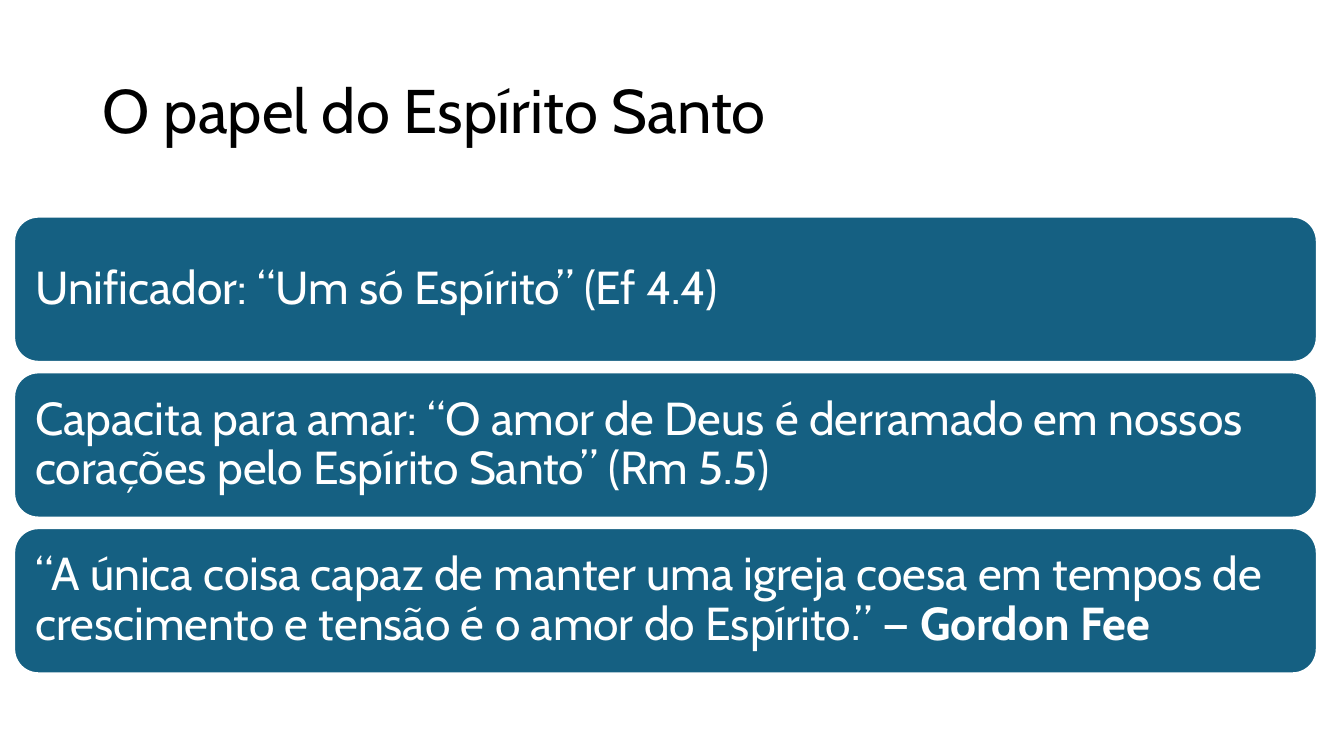
from pptx import Presentation
from pptx.dml.color import RGBColor
from pptx.enum.shapes import MSO_SHAPE as SHAPE
from pptx.enum.text import MSO_ANCHOR as ANCHOR, PP_ALIGN as ALIGN
from pptx.util import Inches, Pt

FONT = "Cabin"
WHITE, BLACK, BLUE = "FFFFFF", "000000", "156082"
CARD_LEFT, CARD_TOP, CARD_W, CARD_H = 0.14, 2.15, 12.92, 1.44
CARD_STEP = 1.545

CARDS = [
    [("Unificador: “Um só Espírito” (Ef 4.4)", False)],
    [("Capacita para amar: “O amor de Deus é derramado em nossos "
      "corações pelo Espírito Santo” (Rm 5.5)", False)],
    [("“A única coisa capaz de manter uma igreja coesa em tempos de "
      "crescimento e tensão é o amor do Espírito.” — ", False),
     ("Gordon Fee", True)],
]


def color(value):
    return RGBColor.from_string(value)


def write(tf, runs, size, ink, inset_x, inset_y):
    tf.word_wrap = True
    tf.vertical_anchor = ANCHOR.MIDDLE
    tf.margin_left = tf.margin_right = Inches(inset_x)
    tf.margin_top = tf.margin_bottom = Inches(inset_y)
    p = tf.paragraphs[0]
    p.alignment = ALIGN.LEFT
    p.line_spacing = 0.9
    for text, bold in runs:
        r = p.add_run()
        r.text = text
        r.font.name = FONT
        r.font.size = Pt(size)
        r.font.bold = bold
        r.font.color.rgb = color(ink)


def add_title(s, text):
    box = s.shapes.add_textbox(Inches(0.92), Inches(0.4), Inches(11.5), Inches(1.45))
    write(box.text_frame, [(text, False)], 44, BLACK, 0.1, 0.05)


def add_card(s, row, runs):
    top = CARD_TOP + row * CARD_STEP
    sp = s.shapes.add_shape(SHAPE.ROUNDED_RECTANGLE, Inches(CARD_LEFT), Inches(top),
                            Inches(CARD_W), Inches(CARD_H))
    sp.shadow.inherit = False
    sp.fill.solid()
    sp.fill.fore_color.rgb = color(BLUE)
    sp.line.color.rgb = color(WHITE)
    sp.line.width = Pt(1.5)
    write(sp.text_frame, runs, 33, WHITE, 0.14, 0.14)


def main():
    prs = Presentation()
    prs.slide_width, prs.slide_height = Inches(13.33), Inches(7.5)
    s = prs.slides.add_slide(prs.slide_layouts[6])
    add_title(s, "O papel do Espírito Santo")
    for row, runs in enumerate(CARDS):
        add_card(s, row, runs)
    prs.save("out.pptx")


if __name__ == "__main__":
    main()
